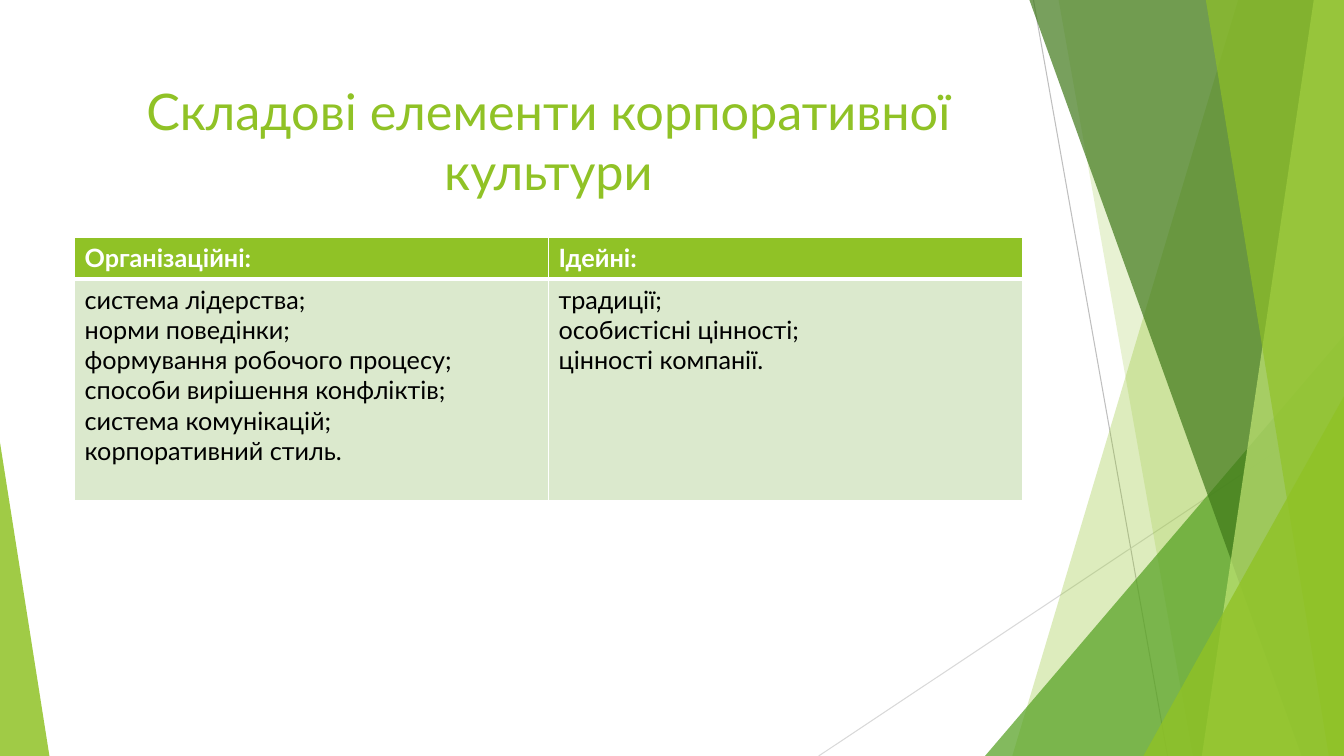
import pptx
import pptx.util
import pptx.dml.color
import pptx.enum.shapes
import pptx.enum.text
import pptx.oxml
import pptx.oxml.ns

TITLE = "Складові елементи корпоративної культури"
PARTS = {
    "Організаційні:": [
        "система лідерства;",
        "норми поведінки;",
        "формування робочого процесу;",
        "способи вирішення конфліктів;",
        "система комунікацій;",
        "корпоративний стиль.",
    ],
    "Ідейні:": [
        "традиції;",
        "особистісні цінності;",
        "цінності компанії.",
    ],
}
HEX = {
    "lime": "90C226", "green": "54A021", "dark": "3F7819", "light": "C0E474",
    "pale": "DBE9CD", "white": "FFFFFF", "black": "000000",
    "gray": "BFBFBF", "mist": "D9D9D9",
}
FONT = "Lato"
WIDE, HIGH = 13.33, 7.5
LEFT, SPAN = 0.74, 9.4
ROWS = [0.41, 2.2]
RAYS = [
    ("gray", 10.25, 0, 11.58, HIGH),
    ("mist", WIDE, 4.03, 8.12, HIGH),
]
FACETS = [
    ("band", "lime", 30, 12.28, 10.04),
    ("band", "lime", 20, 10.5, 11.83),
    ("peak", "green", 72, 9.77, 3.33, 3.56, 1),
    ("band", "dark", 70, 10.21, 12.91),
    ("band", "light", 70, 13.03, 11.92),
    ("band", "lime", 65, 11.96, 13.18),
    ("peak", "lime", 80, 11.34, 3.93, 1.99, 1),
    ("peak", "lime", 85, 0, 4.39, 0.49, 0),
]

inch = pptx.util.Inches
point = pptx.util.Pt


def tint(name):
    return pptx.dml.color.RGBColor.from_string(HEX[name])


def style(para, size, color, bold=False):
    for run in para.runs:
        run.font.name = FONT
        run.font.size = point(size)
        run.font.bold = bold
        run.font.color.rgb = tint(color)


def ray(slide, color, *ends):
    kind = pptx.enum.shapes.MSO_CONNECTOR.STRAIGHT
    line = slide.shapes.add_connector(kind, *map(inch, ends))
    line.line.color.rgb = tint(color)
    line.line.width = point(0.75)
    props = line._element.spPr
    props.append(props.makeelement(pptx.oxml.ns.qn("a:effectLst"), {}))


def band(slide, top, base):
    pen = slide.shapes.build_freeform(inch(top), 0)
    spots = [(WIDE, 0), (WIDE, HIGH), (base, HIGH)]
    pen.add_line_segments([(inch(x), inch(y)) for x, y in spots], close=True)
    return pen.convert_to_shape()


def peak(slide, left, top, width, tip):
    kind = pptx.enum.shapes.MSO_SHAPE.ISOSCELES_TRIANGLE
    shape = slide.shapes.add_shape(
        kind, inch(left), inch(top), inch(width), inch(HIGH - top))
    shape.adjustments[0] = tip
    return shape


def paint(shape, color, share):
    shape.shadow.inherit = False
    shape.line.fill.background()
    shape.fill.solid()
    shape.fill.fore_color.rgb = tint(color)
    node = shape._element.spPr.find(".//" + pptx.oxml.ns.qn("a:srgbClr"))
    alpha = node.makeelement(
        pptx.oxml.ns.qn("a:alpha"), {"val": str(share * 1000)})
    node.append(alpha)


def edge(cell, base):
    props = cell._tc.get_or_add_tcPr()
    sides = {"L": 1, "R": 1, "T": 1, "B": base}
    for spot, (side, width) in enumerate(sides.items()):
        line = pptx.oxml.parse_xml(
            f'<a:ln{side} {pptx.oxml.ns.nsdecls("a")} w="{point(width)}">'
            f'<a:solidFill><a:srgbClr val="{HEX["white"]}"/></a:solidFill>'
            f'</a:ln{side}>')
        props.insert(spot, line)


def fill(cell, lines, back, color, bold, base):
    cell.text_frame.text = "\n".join(lines)
    for para in cell.text_frame.paragraphs:
        style(para, 18, color, bold)
    cell.fill.solid()
    cell.fill.fore_color.rgb = tint(back)
    edge(cell, base)


def head(slide):
    title = slide.shapes.title
    title.left, title.top = inch(LEFT), inch(0.67)
    title.width, title.height = inch(SPAN), inch(1.44)
    frame = title.text_frame
    frame.text = TITLE
    frame.word_wrap = True
    frame.vertical_anchor = pptx.enum.text.MSO_ANCHOR.MIDDLE
    para = frame.paragraphs[0]
    para.alignment = pptx.enum.text.PP_ALIGN.CENTER
    style(para, 36, "lime")


def grid(slide):
    table = slide.shapes.add_table(
        len(ROWS), len(PARTS), inch(LEFT), inch(2.36),
        inch(SPAN), inch(sum(ROWS))).table
    table.horz_banding = False
    for row, high in zip(table.rows, ROWS):
        row.height = inch(high)
    for col, (name, lines) in enumerate(PARTS.items()):
        table.columns[col].width = inch(SPAN / len(PARTS))
        fill(table.cell(0, col), [name], "lime", "white", True, 3)
        fill(table.cell(1, col), lines, "pale", "black", False, 1)
        edge_top = table.cell(1, col)._tc.tcPr.find(pptx.oxml.ns.qn("a:lnT"))
        edge_top.set("w", str(point(3)))


def main():
    deck = pptx.Presentation()
    deck.slide_width, deck.slide_height = inch(WIDE), inch(HIGH)
    slide = deck.slides.add_slide(deck.slide_layouts[5])
    for item in RAYS:
        ray(slide, *item)
    draw = {"band": band, "peak": peak}
    for kind, color, share, *place in FACETS:
        paint(draw[kind](slide, *place), color, share)
    head(slide)
    grid(slide)
    deck.save("out.pptx")


if __name__ == "__main__":
    main()
